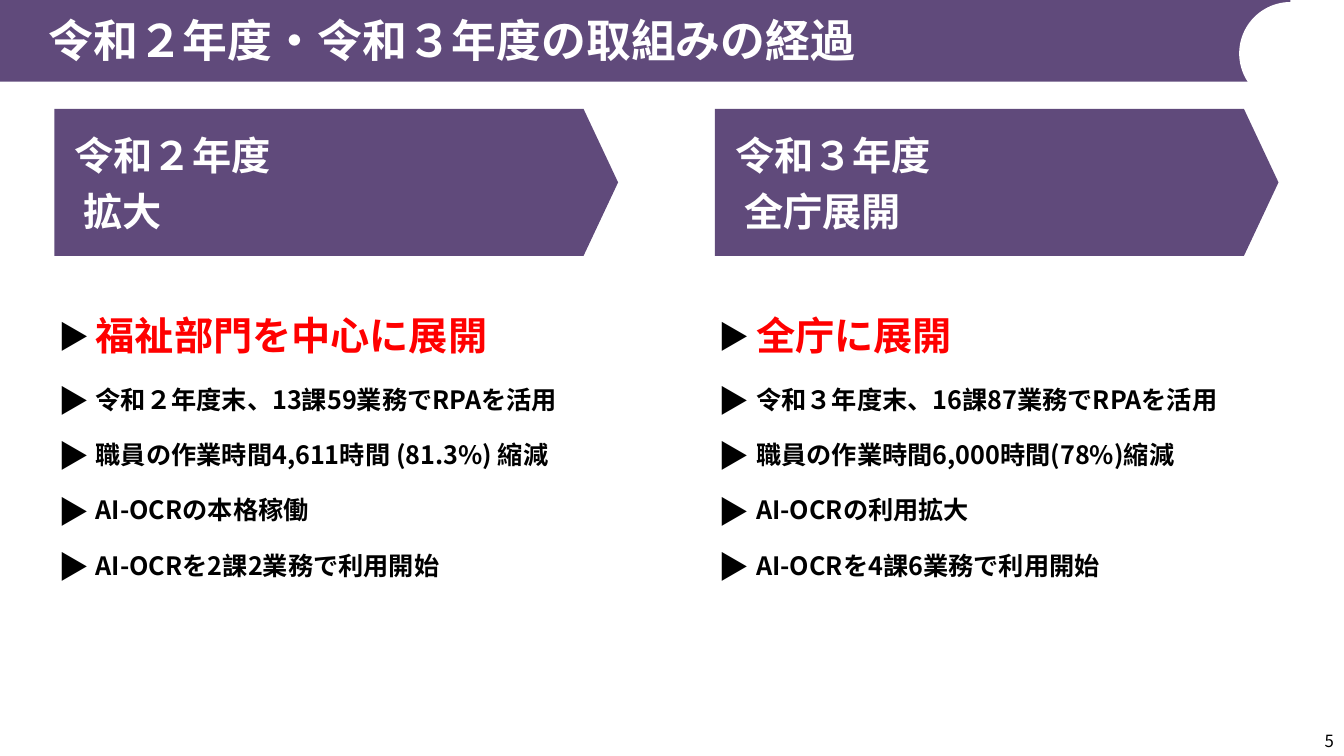
from dataclasses import dataclass

from lxml.etree import SubElement
from pptx import Presentation
from pptx.dml.color import RGBColor
from pptx.enum.shapes import MSO_SHAPE
from pptx.enum.text import MSO_ANCHOR, MSO_AUTO_SIZE, PP_ALIGN
from pptx.oxml.ns import qn
from pptx.util import Inches, Pt


@dataclass(frozen=True)
class Theme:
    font: str = "Noto Sans CJK JP"
    purple: str = "604A7B"
    white: str = "FFFFFF"
    black: str = "000000"
    red: str = "FF0000"
    title: int = 32
    heading: int = 28
    bullet: int = 22
    detail: int = 18
    page: int = 12


YEARS = [
    ("令和２年度", "拡大", "福祉部門を中心に展開", [
        "令和２年度末、13課59業務でRPAを活用",
        "職員の作業時間4,611時間 (81.3%) 縮減",
        "AI-OCRの本格稼働",
        "AI-OCRを2課2業務で利用開始",
    ]),
    ("令和３年度", "全庁展開", "全庁に展開", [
        "令和３年度末、16課87業務でRPAを活用",
        "職員の作業時間6,000時間(78%)縮減",
        "AI-OCRの利用拡大",
        "AI-OCRを4課6業務で利用開始",
    ]),
]
COLUMN_LEFT = 0.54
COLUMN_STEP = 6.55


def write(paragraph, text, *, font, size, color, bold=True,
          align=PP_ALIGN.LEFT, line_spacing=None):
    paragraph.alignment = align
    paragraph.line_spacing = line_spacing
    run = paragraph.add_run()
    run.text = text
    run.font.size = Pt(size)
    run.font.bold = bold
    run.font.color.rgb = RGBColor.from_string(color)
    run.font.name = font
    SubElement(run._r.get_or_add_rPr(), qn("a:ea"), typeface=font)


def indent(paragraph, left, hanging=0):
    properties = paragraph._p.get_or_add_pPr()
    properties.set("marL", str(Inches(left)))
    properties.set("indent", str(-Inches(hanging)))
    return properties


def set_frame(frame, margins, anchor=MSO_ANCHOR.TOP):
    """Set the margins in the order left, top, right, bottom."""
    frame.word_wrap = True
    frame.auto_size = MSO_AUTO_SIZE.NONE
    frame.vertical_anchor = anchor
    (frame.margin_left, frame.margin_top,
     frame.margin_right, frame.margin_bottom) = map(Inches, margins)


class SlideBuilder:
    def __init__(self, slide, theme):
        self.slide = slide
        self.theme = theme

    def shape(self, preset, left, top, width, height, fill):
        shape = self.slide.shapes.add_shape(
            preset, Inches(left), Inches(top), Inches(width), Inches(height))
        shape.shadow.inherit = False
        shape.fill.solid()
        shape.fill.fore_color.rgb = RGBColor.from_string(fill)
        shape.line.fill.background()
        return shape

    def text_box(self, left, top, width, height, margins):
        box = self.slide.shapes.add_textbox(
            Inches(left), Inches(top), Inches(width), Inches(height))
        set_frame(box.text_frame, margins)
        return box.text_frame

    def title(self, text):
        title = self.slide.shapes.title
        title.left, title.top = Inches(0), Inches(0)
        title.width, title.height = Inches(12.78), Inches(0.79)
        set_frame(title.text_frame, (0.48, 0.04, 0.04, 0.04), MSO_ANCHOR.MIDDLE)
        write(title.text_frame.paragraphs[0], text, font=self.theme.font,
              size=self.theme.title, color=self.theme.white, line_spacing=1.0)
        # The title has to lie in front of the header band.
        title.element.getparent().append(title.element)

    def header(self, text):
        self.shape(MSO_SHAPE.RECTANGLE, 0, 0, 12.8, 0.81, self.theme.purple)
        self.shape(MSO_SHAPE.OVAL, 12.29, 0.02, 1.02, 1.02, self.theme.white)
        self.title(text)

    def year_arrow(self, left, year, stage):
        arrow = self.shape(MSO_SHAPE.PENTAGON, left, 1.08, 5.59, 1.46,
                           self.theme.purple)
        arrow.adjustments[0] = 0.235
        frame = arrow.text_frame
        set_frame(frame, (0.2, 0, 0.08, 0.08), MSO_ANCHOR.MIDDLE)
        stage_line = frame.add_paragraph()
        indent(stage_line, 0.09)
        for paragraph, text in ((frame.paragraphs[0], year), (stage_line, stage)):
            write(paragraph, text, font=self.theme.font, size=self.theme.heading,
                  color=self.theme.white, line_spacing=Pt(40))

    def bullet(self, paragraph, text, size, color, line_spacing):
        theme = self.theme
        properties = indent(paragraph, 0.37, hanging=0.37)
        bullet_color = SubElement(properties, qn("a:buClr"))
        SubElement(bullet_color, qn("a:srgbClr"), val=theme.black)
        percent = round(100 * theme.bullet / size)
        SubElement(properties, qn("a:buSzPct"), val=str(percent * 1000))
        SubElement(properties, qn("a:buFont"), typeface=theme.font)
        SubElement(properties, qn("a:buChar"), char="▶")
        write(paragraph, text, font=theme.font, size=size, color=color,
              line_spacing=line_spacing)

    def results(self, left, heading, details):
        theme = self.theme
        frame = self.text_box(left, 2.78, 5.9, 4.12, (0.04, 0.05, 0.04, 0.05))
        self.bullet(frame.paragraphs[0], heading, theme.heading, theme.red, Pt(52.5))
        for detail in details:
            self.bullet(frame.add_paragraph(), detail, theme.detail, theme.black,
                        Pt(39.6))

    def page_number(self, number):
        frame = self.text_box(12.47, 7.2, 0.86, 0.3, (0.1, 0.05, 0.1, 0.05))
        write(frame.paragraphs[0], number, font=self.theme.font,
              size=self.theme.page, color=self.theme.black, bold=False,
              align=PP_ALIGN.RIGHT)


def main():
    presentation = Presentation()
    presentation.slide_width = Inches(13.33)
    presentation.slide_height = Inches(7.5)
    title_only = presentation.slide_layouts[5]
    builder = SlideBuilder(presentation.slides.add_slide(title_only), Theme())

    builder.header("令和２年度・令和３年度の取組みの経過")
    for column, (year, stage, heading, details) in enumerate(YEARS):
        left = COLUMN_LEFT + column * COLUMN_STEP
        builder.year_arrow(left, year, stage)
        builder.results(left, heading, details)
    builder.page_number("5")

    presentation.save("out.pptx")


if __name__ == "__main__":
    main()
